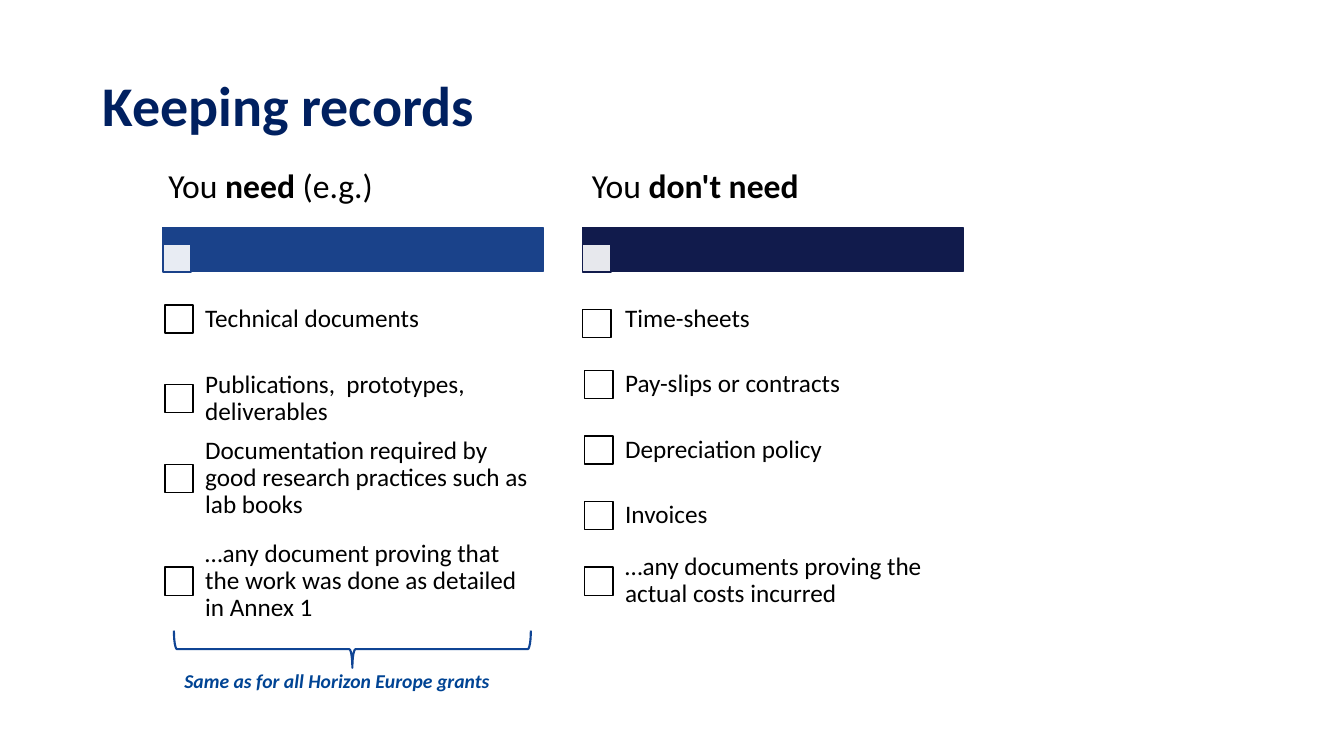
from lxml.etree import SubElement
from pptx import Presentation
from pptx.dml.color import RGBColor
from pptx.enum.shapes import MSO_SHAPE
from pptx.enum.text import MSO_ANCHOR
from pptx.oxml.ns import qn
from pptx.util import Inches, Pt

CELL = Inches(0.1)
TICK = 2.8
ROW = 6.5
LEFT = [
    ("Technical documents", ROW),
    ("Publications,  prototypes, deliverables", 9.3),
    ("Documentation required by good research practices such as lab books", ROW),
    ("…any document proving that the work was done as detailed in Annex 1", 13.9),
]
RIGHT = [
    ("Time-sheets", ROW),
    ("Pay-slips or contracts", ROW),
    ("Depreciation policy", ROW),
    ("Invoices", ROW),
    ("…any documents proving the actual costs incurred", ROW),
]


def paint(color, hue):
    """Set a colour format from a hex string."""
    color.rgb = RGBColor.from_string(hue)


def grid(*cells):
    """Turn grid cells into slide lengths."""
    return [round(cell * CELL) for cell in cells]


def shape(slide, kind, box, fill, line, width=1, alpha=None):
    """Add a preset shape, unfilled when fill is None."""
    item = slide.shapes.add_shape(kind, *grid(*box))
    item.shadow.inherit = False
    if fill:
        item.fill.solid()
        paint(item.fill.fore_color, fill)
    else:
        item.fill.background()
    if alpha:
        tone = item.fill._xPr.find(".//" + qn("a:srgbClr"))
        SubElement(tone, qn("a:alpha"), val=str(alpha * 1000))
    paint(item.line.color, line)
    item.line.width = Pt(width)
    return item


def text(slide, box, runs, size, hue="000000", pads=(1, 0.5, 1, 0.5),
         anchor=MSO_ANCHOR.MIDDLE, lead=0.9, italic=False):
    """Add a one-paragraph text box of (words, bold) runs."""
    frame = slide.shapes.add_textbox(*grid(*box)).text_frame
    sides = ("margin_left", "margin_top", "margin_right", "margin_bottom")
    form = dict(zip(sides, grid(*pads)), word_wrap=True, vertical_anchor=anchor)
    for name, value in form.items():
        setattr(frame, name, value)
    para = frame.paragraphs[0]
    para.line_spacing = lead
    for words, bold in runs:
        run = para.add_run()
        run.text = words
        look = {"name": "Calibri", "size": Pt(size), "bold": bold, "italic": italic}
        for name, value in look.items():
            setattr(run.font, name, value)
        paint(run.font.color, hue)


def column(slide, left, head, runs, hue, items, first=(0.2, 0)):
    """Add a heading, its bar and a stack of checkbox rows."""
    box = MSO_SHAPE.RECTANGLE
    shape(slide, box, (left, 22.55, 37.7, 4.4), hue, hue)
    shape(slide, box, (left, 24.2, TICK, TICK), "FFFFFF", hue, alpha=90)
    text(slide, (head, 14.6, 37.7, 8), runs, 24, pads=(0.5, 0.3, 0.5, 0.3))
    top = 28.4
    shift, drop = first
    for words, tall in items:
        tick = top + (tall - TICK) / 2 + drop
        shape(slide, box, (left + shift, tick, TICK, TICK), "FFFFFF", "000000")
        text(slide, (left + 2.8, top, 35.1, tall), [(words, False)], 18, pads=[1.4] * 4)
        top += tall
        shift, drop = 0.2, 0


def main():
    """Build the slide and save it."""
    deck = Presentation()
    deck.slide_width, deck.slide_height = Inches(13.33), Inches(7.5)
    slide = deck.slides.add_slide(deck.slide_layouts[6])
    text(slide, (9.2, 7.6, 51, 6.2), [("Keeping records", True)], 40, "002060",
         pads=(1, 0.5, 1, 0), anchor=MSO_ANCHOR.BOTTOM)
    need = [("You ", False), ("need ", True), ("(e.g.)", False)]
    column(slide, 16.15, 16.2, need, "1A428A", LEFT)
    skip = [("You ", False), ("don't need", True)]
    column(slide, 57.8, 58.2, skip, "111B4C", RIGHT, first=(0, 0.45))
    text(slide, (17.3, 65.9, 38, 3.4), [("Same as for all Horizon Europe grants", True)],
         14, "004494", anchor=MSO_ANCHOR.TOP, lead=1, italic=True)
    brace = shape(slide, MSO_SHAPE.LEFT_BRACE, (33.1, 46.7, 3.7, 35.4), None, "0F4494", 1.5)
    brace.rotation = 270
    deck.save("out.pptx")


if __name__ == "__main__":
    main()
